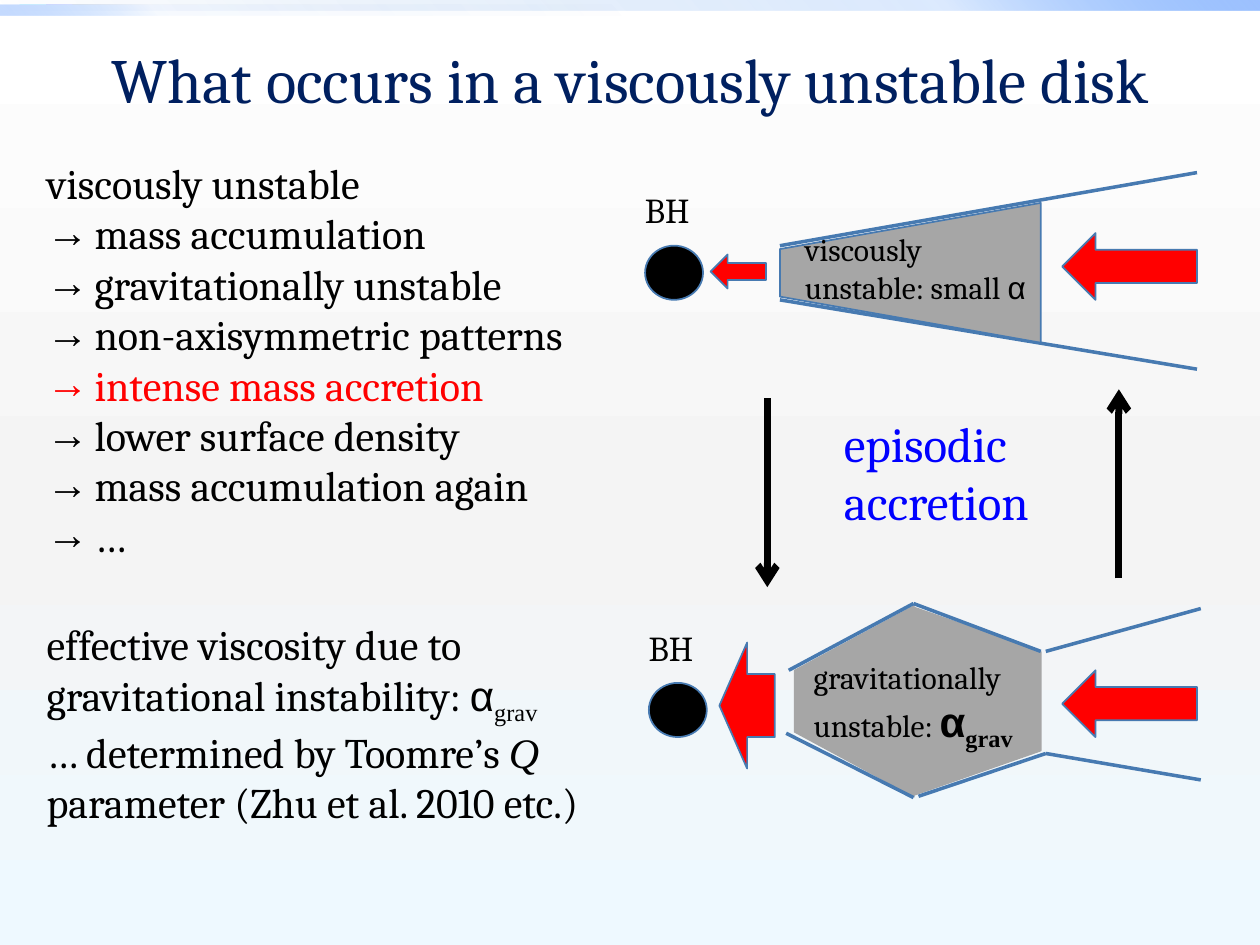
from lxml import etree
from pptx import Presentation
from pptx.dml.color import RGBColor
from pptx.enum.shapes import MSO_CONNECTOR, MSO_SHAPE
from pptx.enum.text import MSO_ANCHOR, MSO_AUTO_SIZE, PP_ALIGN
from pptx.oxml.ns import qn
from pptx.util import Inches, Pt

STRAIGHT = MSO_CONNECTOR.STRAIGHT
RECTANGLE = MSO_SHAPE.RECTANGLE
OVAL = MSO_SHAPE.OVAL
LEFT_ARROW = MSO_SHAPE.LEFT_ARROW
TRAPEZOID = MSO_SHAPE.TRAPEZOID

SERIF, SANS, ROMAN = "Cambria", "Arial", "Times New Roman"
BLACK, RED, BLUE, NAVY = "000000", "FF0000", "0000FF", "002060"
GRAY, OUTLINE = "A6A6A6", "477AB1"
BULLET_INDENT = 0.38

CYCLE = ["mass accumulation", "gravitationally unstable",
         "non-axisymmetric patterns", "intense mass accretion",
         "lower surface density", "mass accumulation again", "…"]
HIGHLIGHT = "intense mass accretion"


def rgb(value):
    return RGBColor.from_string(value)


def place(shape, left, top, width, height):
    shape.left, shape.top = Inches(left), Inches(top)
    shape.width, shape.height = Inches(width), Inches(height)


def set_gradient(fill, owner, stops, angle):
    """Fill owner with (position, colour, opacity) stops, all in percent."""
    fill.gradient()
    gradient = next(owner.iter(qn("a:gradFill")))
    gradient.clear()
    stop_list = etree.SubElement(gradient, qn("a:gsLst"))
    for position, colour, opacity in stops:
        stop = etree.SubElement(stop_list, qn("a:gs"), pos=str(position * 1000))
        tint = etree.SubElement(stop, qn("a:srgbClr"), val=colour)
        if opacity < 100:
            etree.SubElement(tint, qn("a:alpha"), val=str(opacity * 1000))
    etree.SubElement(gradient, qn("a:lin"), ang=str(angle * 60000), scaled="0")


def add_run(paragraph, text, size, font=SERIF, colour=BLACK, bold=False,
            italic=False, subscript=False):
    run = paragraph.add_run()
    run.text = text
    run.font.size, run.font.name = Pt(size), font
    run.font.color.rgb = rgb(colour)
    run.font.bold, run.font.italic = bold, italic
    if subscript:
        run._r.get_or_add_rPr().set("baseline", "-25000")


def add_alpha_grav(paragraph, size, bold=False):
    add_run(paragraph, "α", size, SANS, bold=bold)
    add_run(paragraph, "grav", size, ROMAN, bold=bold, subscript=True)


def set_bullet(paragraph, char=None):
    """Hang the paragraph on char, or leave it flush without a bullet."""
    paragraph.space_before = Pt(0)
    properties = paragraph._p.get_or_add_pPr()
    indent = Inches(BULLET_INDENT) if char else 0
    properties.set("marL", str(indent))
    properties.set("indent", str(-indent))
    if char:
        etree.SubElement(properties, qn("a:buChar"), char=char)
    else:
        etree.SubElement(properties, qn("a:buNone"))


def open_body(placeholder, *box):
    place(placeholder, *box)
    frame = placeholder.text_frame
    frame.word_wrap, frame.auto_size = True, MSO_AUTO_SIZE.NONE
    frame.vertical_anchor = MSO_ANCHOR.TOP
    set_bullet(frame.paragraphs[0])
    return frame


def add_label(slide, left, top, width, height):
    label = slide.shapes.add_textbox(*map(Inches, (left, top, width, height)))
    label.text_frame.word_wrap = True
    return label.text_frame.paragraphs[0]


def add_solid(slide, kind, left, top, width, height, colour, outline=OUTLINE):
    shape = slide.shapes.add_shape(kind, *map(Inches, (left, top, width, height)))
    shape.shadow.inherit = False
    shape.fill.solid()
    shape.fill.fore_color.rgb = rgb(colour)
    if outline:
        shape.line.color.rgb, shape.line.width = rgb(outline), Pt(1)
    else:
        shape.line.fill.background()
    return shape


def add_disk_part(slide, left, top, width, height, turn, slope, outline):
    """Add a trapezoid lying on its side; the box is what it covers once turned."""
    shift = (width - height) / 2
    part = add_solid(slide, TRAPEZOID, left + shift, top - shift, height, width,
                     GRAY, outline)
    part.rotation = turn
    part.adjustments[0] = slope


def add_line(slide, start, end, colour=OUTLINE, width=2, arrow=False):
    line = slide.shapes.add_connector(STRAIGHT, *map(Inches, (*start, *end)))
    line.line.color.rgb, line.line.width = rgb(colour), Pt(width)
    if arrow:
        etree.SubElement(line.line._get_or_add_ln(), qn("a:tailEnd"), type="arrow")
    etree.SubElement(line._element.spPr, qn("a:effectLst"))


def add_path(slide, *points):
    for start, end in zip(points, points[1:]):
        add_line(slide, start, end)


def add_black_hole(slide, left, top):
    """Add the hole, its name and the inflow from the outer disk."""
    add_solid(slide, OVAL, left, top, 0.46, 0.43, BLACK)
    add_run(add_label(slide, left - 0.1, top - 0.5, 0.69, 0.44), "BH", 20)
    add_solid(slide, LEFT_ARROW, 8.43, top - 0.1, 1.07, 0.53, RED)


def draw_backdrop(slide):
    set_gradient(slide.background.fill, slide._element,
                 [(0, "FFFFFF", 100), (55, "F4F4F4", 100), (100, "EEF9FF", 100)], 90)
    for top, width, middle, last, angle in ((0, 10, 20, 100, 315),
                                            (0.04, 5, 5, 60, 135)):
        bar = add_solid(slide, RECTANGLE, 0, top, width, 0.08, BLUE, None)
        set_gradient(bar.fill, bar._element,
                     [(0, "0058B7", 0), (75, "4F95FF", middle),
                      (100, "9EC2FF", last)], angle)


def write_text(slide):
    title, cycle, viscosity = slide.placeholders
    place(title, 0.5, 0.19, 9, 0.86)
    title.text_frame.vertical_anchor = MSO_ANCHOR.MIDDLE
    heading = title.text_frame.paragraphs[0]
    heading.alignment = PP_ALIGN.CENTER
    add_run(heading, "What occurs in a viscously unstable disk", 36, colour=NAVY)

    frame = open_body(cycle, 0.27, 1.2, 4.58, 3.33)
    add_run(frame.paragraphs[0], "viscously unstable", 24)
    for step in CYCLE:
        paragraph = frame.add_paragraph()
        set_bullet(paragraph, "→")
        add_run(paragraph, step, 24, colour=RED if step == HIGHLIGHT else BLACK)

    frame = open_body(viscosity, 0.27, 4.86, 4.7, 1.72)
    effective = frame.paragraphs[0]
    add_run(effective, "effective viscosity due to gravitational instability: ", 24)
    add_alpha_grav(effective, 24)
    toomre = frame.add_paragraph()
    set_bullet(toomre)
    add_run(toomre, "… determined by Toomre’s ", 24)
    add_run(toomre, "Q", 24, ROMAN, italic=True)
    add_run(toomre, " parameter (Zhu et al. 2010 etc.)", 24)


def draw_viscous_disk(slide):
    add_path(slide, (9.5, 1.37), (6.19, 1.95))
    add_path(slide, (6.19, 2.38), (9.5, 2.93))
    add_disk_part(slide, 6.19, 1.61, 2.07, 1.11, 270, 0.33, OUTLINE)
    caption = add_label(slide, 6.29, 1.78, 2.07, 0.71)
    add_run(caption, "viscously unstable: small ", 18)
    add_run(caption, "α", 18, SANS)
    add_black_hole(slide, 5.12, 1.95)
    add_solid(slide, LEFT_ARROW, 5.64, 2.02, 0.44, 0.27, RED)


def draw_gravitational_disk(slide):
    add_disk_part(slide, 7.25, 4.82, 1.01, 1.49, 90, 0.35, GRAY)
    add_disk_part(slide, 6.3, 4.8, 0.96, 1.53, 270, 0.54, None)
    add_path(slide, (9.53, 4.83), (8.3, 5.17))
    add_path(slide, (8.26, 5.17), (7.25, 4.79), (6.26, 5.32))
    add_path(slide, (9.53, 6.19), (8.3, 5.98), (7.29, 6.32))
    add_path(slide, (7.25, 6.33), (6.24, 5.82))
    caption = add_label(slide, 6.36, 5.17, 1.97, 0.81)
    add_run(caption, "gravitationally unstable: ", 18)
    add_alpha_grav(caption, 24, bold=True)
    add_black_hole(slide, 5.15, 5.42)
    add_solid(slide, LEFT_ARROW, 5.71, 5.1, 0.44, 1, RED)


def draw_episode(slide):
    add_line(slide, (6.09, 3.16), (6.09, 4.66), BLACK, 4, arrow=True)
    add_line(slide, (8.88, 4.59), (8.88, 3.09), BLACK, 4, arrow=True)
    add_run(add_label(slide, 6.6, 3.23, 1.83, 1.04), "episodic accretion", 28,
            colour=BLUE)


def main():
    deck = Presentation()
    deck.slide_width, deck.slide_height = Inches(10), Inches(7.5)
    slide = deck.slides.add_slide(deck.slide_layouts.get_by_name("Two Content"))
    draw_backdrop(slide)
    write_text(slide)
    draw_viscous_disk(slide)
    draw_gravitational_disk(slide)
    draw_episode(slide)
    deck.save("out.pptx")


if __name__ == "__main__":
    main()
